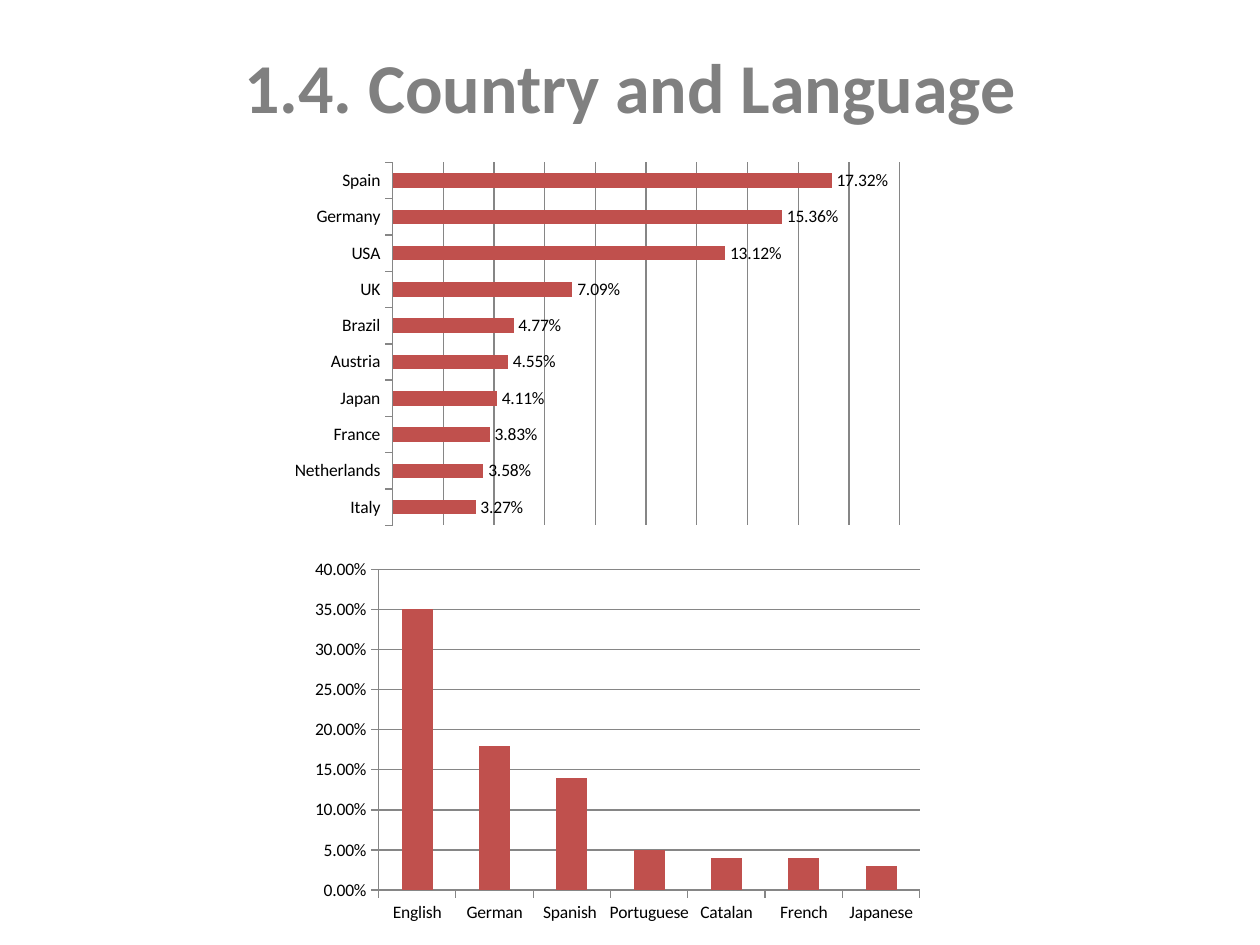
from pptx import Presentation
from pptx.chart.data import CategoryChartData
from pptx.dml.color import RGBColor
from pptx.enum.chart import XL_CHART_TYPE as Kind, XL_LABEL_POSITION as Pos, XL_TICK_MARK as Tick
from pptx.enum.text import MSO_ANCHOR as Anchor, PP_ALIGN as Align
from pptx.util import Inches, Pt

TITLE = "1.4. Country and Language"
LANDS = [
    ("Spain", 0.1732), ("Germany", 0.1536), ("USA", 0.1312), ("UK", 0.0709),
    ("Brazil", 0.0477), ("Austria", 0.0455), ("Japan", 0.0411),
    ("France", 0.0383), ("Netherlands", 0.0358), ("Italy", 0.0327),
]
TONGUES = [
    ("English", 0.35), ("German", 0.18), ("Spanish ", 0.14), ("Portuguese", 0.05),
    ("Catalan", 0.04), ("French", 0.04), ("Japanese", 0.03),
]
FONT = "Calibri"
FORMAT = "0.00%"
RED = RGBColor(0xC0, 0x50, 0x4D)
GRAY = RGBColor(0x80, 0x80, 0x80)
LINE = RGBColor(0x86, 0x86, 0x86)
BLACK = RGBColor(0, 0, 0)


def add_bars(slide, kind, rows, left, top, high, step):
    data = CategoryChartData(number_format=FORMAT)
    data.categories = [name for name, _ in rows]
    data.add_series("Series 1", [share for _, share in rows])
    frame = slide.shapes.add_chart(
        kind, Inches(left), Inches(top), Inches(5), Inches(3), data)
    chart = frame.chart
    chart.has_title = False
    chart.has_legend = False
    chart.font.name = FONT
    chart.font.size = Pt(10)
    chart.font.color.rgb = BLACK

    plot = chart.plots[0]
    plot.gap_width = 150
    plot.vary_by_categories = False
    fill = plot.series[0].format.fill
    fill.solid()
    fill.fore_color.rgb = RED

    cats, vals = chart.category_axis, chart.value_axis
    for axis in (cats, vals):
        axis.major_tick_mark = Tick.OUTSIDE
        axis.minor_tick_mark = Tick.NONE
        axis.format.line.color.rgb = LINE
        axis.format.line.width = Pt(0.75)
    vals.minimum_scale = 0
    vals.maximum_scale = high
    vals.major_unit = step
    vals.has_major_gridlines = True
    grid = vals.major_gridlines.format.line
    grid.color.rgb = LINE
    grid.width = Pt(0.75)
    vals.tick_labels.number_format = FORMAT
    vals.tick_labels.number_format_is_linked = False
    return chart


deck = Presentation()
deck.slide_width, deck.slide_height = Inches(10), Inches(7.5)
slide = deck.slides.add_slide(deck.slide_layouts[6])

lands = add_bars(slide, Kind.BAR_CLUSTERED, LANDS, 2.24, 1.23, 0.2, 0.02)
lands.category_axis.reverse_order = True
lands.value_axis.visible = False
labels = lands.plots[0].series[0].data_labels
labels.show_value = True
labels.position = Pos.OUTSIDE_END
labels.number_format = FORMAT
labels.number_format_is_linked = False

add_bars(slide, Kind.COLUMN_CLUSTERED, TONGUES, 2.4, 4.38, 0.4, 0.05)

box = slide.shapes.add_textbox(Inches(0.5), Inches(0.05), Inches(9), Inches(1.25))
text = box.text_frame
text.word_wrap = True
text.vertical_anchor = Anchor.MIDDLE
head = text.paragraphs[0]
head.text = TITLE
head.alignment = Align.CENTER
head.font.name = FONT
head.font.size = Pt(40)
head.font.bold = True
head.font.color.rgb = GRAY

deck.save("out.pptx")
